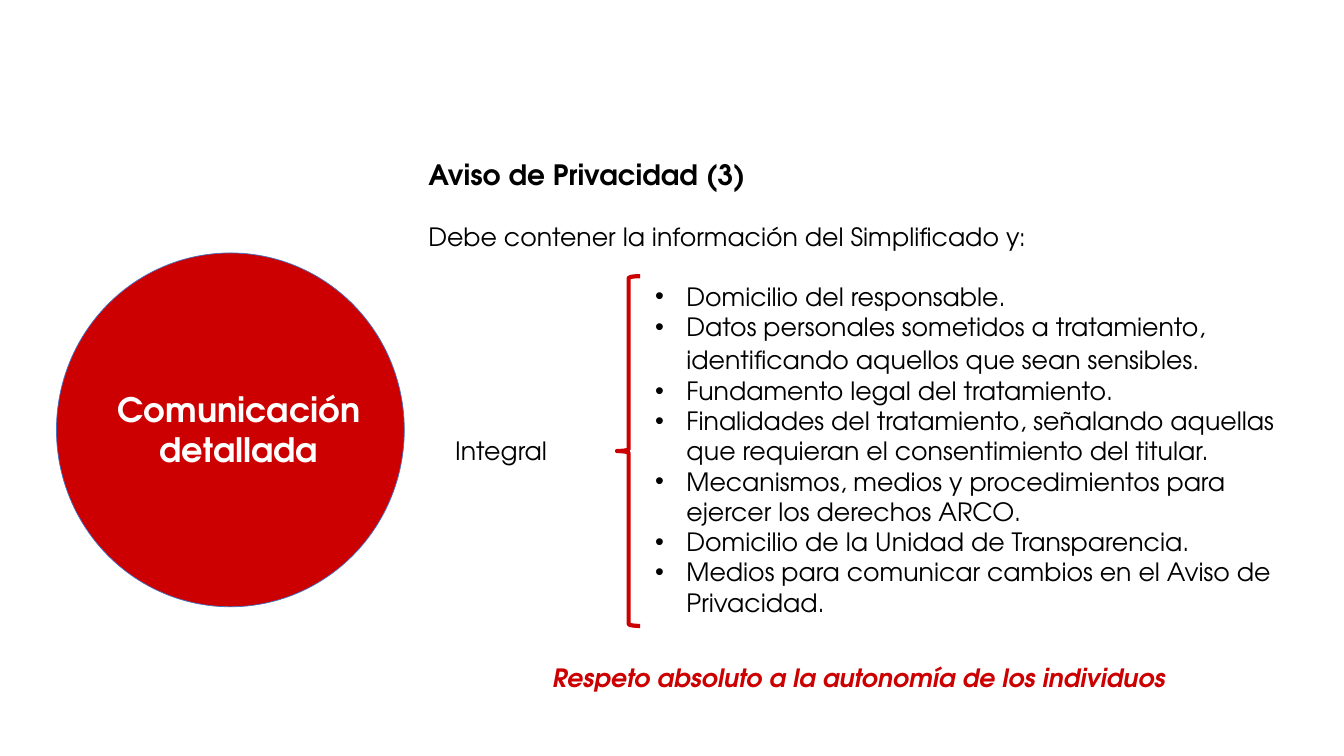
from pptx import Presentation
from pptx.dml.color import RGBColor
from pptx.enum.shapes import MSO_SHAPE
from pptx.enum.text import MSO_ANCHOR, PP_ALIGN
from pptx.oxml.ns import qn
from pptx.util import Inches, Pt
from lxml import etree

FONT = "TeX Gyre Adventor"
RED, BLACK, WHITE, BLUE = "CC0000", "000000", "FFFFFF", "4472C4"
LIST_TOP, LIST_HEIGHT = 2.74, 3.47

# Each item is a list of (text, size) runs
NOTICE_ITEMS = [
    [("Domicilio del responsable.", 18)],
    [("Datos personales sometidos a tratamiento, identificando aquellos "
      "que sean sensibles.", 18), (" ", 20)],
    [("Fundamento legal del tratamiento.", 18)],
    [("Finalidades del tratamiento, señalando aquellas que requieran el "
      "consentimiento del titular.", 18)],
    [("Mecanismos, medios y procedimientos para ejercer los derechos ARCO.", 18)],
    [("Domicilio de la Unidad de Transparencia.", 18)],
    [("Medios para comunicar cambios en el Aviso de Privacidad.", 18)],
]


def color(value):
    return RGBColor.from_string(value)


def add_text_frame(slide, left, top, width, height):
    box = slide.shapes.add_textbox(Inches(left), Inches(top), Inches(width), Inches(height))
    frame = box.text_frame
    frame.word_wrap = True
    frame.vertical_anchor = MSO_ANCHOR.TOP
    return frame


def add_run(paragraph, text, size=18, ink=BLACK, bold=False, italic=False):
    run = paragraph.add_run()
    run.text = text
    font = run.font
    font.name = FONT
    font.size = Pt(size)
    font.bold = bold
    font.italic = italic
    font.color.rgb = color(ink)


def add_centered_line(slide, area, text, **style):
    paragraph = add_text_frame(slide, *area).paragraphs[0]
    paragraph.alignment = PP_ALIGN.CENTER
    add_run(paragraph, text, **style)


def add_heading(slide):
    frame = add_text_frame(slide, 4.15, 1.51, 8.22, 1.04)
    add_run(frame.paragraphs[0], "Aviso de Privacidad (3)", size=20, bold=True)
    intro = frame.add_paragraph()
    intro.space_before = Pt(22)
    add_run(intro, "Debe contener la información del Simplificado y:")


def set_bullet(paragraph):
    properties = paragraph._p.get_or_add_pPr()
    indent = Inches(0.31)
    properties.set("marL", str(indent))
    properties.set("indent", str(-indent))
    etree.SubElement(properties, qn("a:buFont")).set("typeface", "Arial")
    etree.SubElement(properties, qn("a:buChar")).set("char", "•")


def add_bullet_list(slide, items):
    frame = add_text_frame(slide, 6.4, LIST_TOP, 6.54, LIST_HEIGHT)
    for index, runs in enumerate(items):
        paragraph = frame.add_paragraph() if index else frame.paragraphs[0]
        set_bullet(paragraph)
        for text, size in runs:
            add_run(paragraph, text, size)


def add_outline_shape(slide, kind, area, line, weight, fill=None):
    shape = slide.shapes.add_shape(kind, *(Inches(length) for length in area))
    shape.shadow.inherit = False
    if fill:
        shape.fill.solid()
        shape.fill.fore_color.rgb = color(fill)
    else:
        shape.fill.background()
    shape.line.color.rgb = color(line)
    shape.line.width = Pt(weight)


def main():
    deck = Presentation()
    deck.slide_width = Inches(13.33)
    deck.slide_height = Inches(7.5)
    slide = deck.slides.add_slide(deck.slide_layouts[6])

    # Heading and the bracketed list of contents
    add_heading(slide)
    add_centered_line(slide, (3.58, 4.27, 2.78, 0.4), "Integral")
    add_bullet_list(slide, NOTICE_ITEMS)
    add_outline_shape(slide, MSO_SHAPE.LEFT_BRACE,
                      (6.12, LIST_TOP, 0.23, LIST_HEIGHT), RED, 3)

    # Closing message
    add_centered_line(slide, (4.41, 6.52, 8.22, 0.4),
                      "Respeto absoluto a la autonomía de los individuos",
                      ink=RED, bold=True, italic=True)

    # Red circle with its label
    add_outline_shape(slide, MSO_SHAPE.OVAL, (0.56, 2.51, 3.45, 3.51), BLUE, 0.5, fill=RED)
    add_centered_line(slide, (0.98, 3.81, 2.78, 0.91), "Comunicación detallada",
                      size=24, ink=WHITE, bold=True)

    deck.save("out.pptx")


if __name__ == "__main__":
    main()
